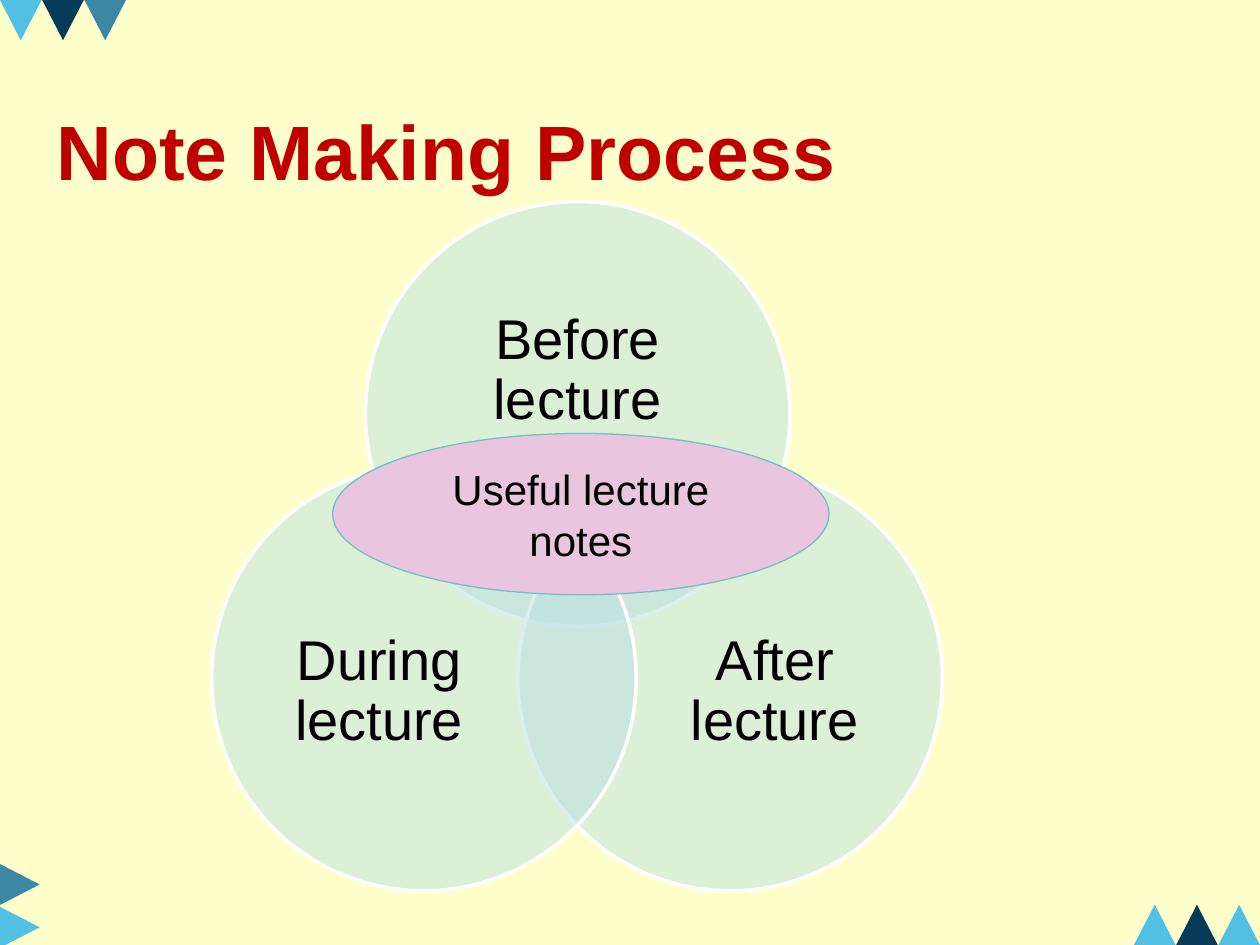
from lxml import etree
from pptx import Presentation
from pptx.dml.color import RGBColor
from pptx.enum.shapes import MSO_SHAPE
from pptx.enum.text import MSO_ANCHOR, PP_ALIGN
from pptx.oxml.ns import qn
from pptx.util import Inches, Pt

OVAL, TRIANGLE = MSO_SHAPE.OVAL, MSO_SHAPE.ISOSCELES_TRIANGLE
MIDDLE = MSO_ANCHOR.MIDDLE
LEFT, CENTER = PP_ALIGN.LEFT, PP_ALIGN.CENTER
HEX = {
    "page": "FFFFCC", "title": "C00000", "text": "000000",
    "sky": "51C0E3", "navy": "063A59", "steel": "3B88A5",
    "ring": "BBE0E3", "white": "FFFFFF", "pink": "E9C5E0", "edge": "72BFC5",
}


def add_form(kind, box, fill, line=None, width=1):
    form = slide.shapes.add_shape(kind, *map(Inches, box))
    form.shadow.inherit = False
    form.fill.solid()
    form.fill.fore_color.rgb = RGBColor.from_string(HEX[fill])
    if line:
        form.line.color.rgb = RGBColor.from_string(HEX[line])
        form.line.width = Pt(width)
    else:
        form.line.fill.background()
    return form


def write(shape, text, size, color="text", bold=False, align=CENTER,
          spacing=1.0, inset=None):
    frame = shape.text_frame
    frame.word_wrap = True
    frame.vertical_anchor = MIDDLE
    if inset is not None:
        frame.margin_left = frame.margin_right = Inches(inset)
        frame.margin_top = frame.margin_bottom = Inches(inset)
    para = frame.paragraphs[0]
    para.alignment = align
    para.line_spacing = spacing
    run = para.add_run()
    run.text = text
    run.font.name = "Arial"
    run.font.size = Pt(size)
    run.font.bold = bold
    run.font.color.rgb = RGBColor.from_string(HEX[color])


deck = Presentation()
deck.slide_width, deck.slide_height = Inches(10), Inches(7.5)
slide = deck.slides.add_slide(deck.slide_layouts[5])
slide.background.fill.solid()
slide.background.fill.fore_color.rgb = RGBColor.from_string(HEX["page"])

# Corner triangles: start, step, turn and colours of each row
rows = [
    ((0, 0), (0.335, 0), 180, ("sky", "navy", "steel")),
    ((9, 7.18), (0.335, 0), 0, ("sky", "navy", "sky")),
    ((-0.01, 6.86), (0, 0.34), 90, ("steel", "sky")),
]
for (left, top), (dx, dy), turn, tints in rows:
    for i, tint in enumerate(tints):
        box = (left + i * dx, top + i * dy, 0.33, 0.32)
        add_form(TRIANGLE, box, tint).rotation = turn

# Title
title = slide.shapes.title
title.left, title.top = Inches(0.35), Inches(0.68)
title.width, title.height = Inches(9.45), Inches(1.02)
write(title, "Note Making Process", 44, color="title", bold=True, align=LEFT)

# Venn circles with their labels
size = 3.37
stages = [
    ("Before lecture", (2.9, 1.6), (3.35, 2.19, 2.47, 1.51)),
    ("After lecture", (4.11, 3.7), (5.14, 4.57, 2.02, 1.85)),
    ("During lecture", (1.68, 3.7), (2, 4.57, 2.02, 1.85)),
]
for text, spot, box in stages:
    ring = add_form(OVAL, (*spot, size, size), "ring", "white", 2)
    tint = ring.fill._xPr.find(qn("a:solidFill"))[0]
    etree.SubElement(tint, qn("a:alpha"), val="50000")
    label = slide.shapes.add_textbox(*map(Inches, box))
    write(label, text, 32, spacing=0.9, inset=0)

# Shared centre
core = add_form(OVAL, (2.64, 3.44, 3.94, 1.28), "pink", "edge", 0.75)
write(core, "Useful lecture notes", 24)

deck.save("out.pptx")
